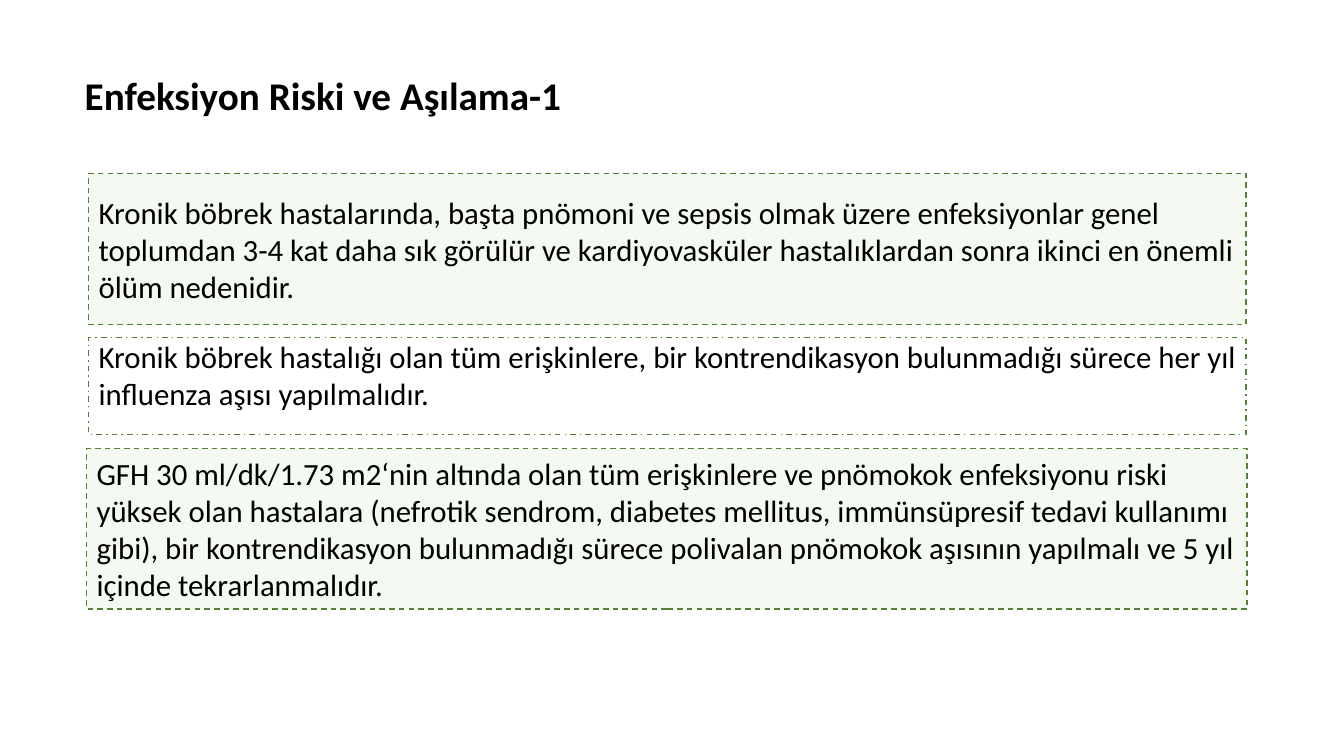
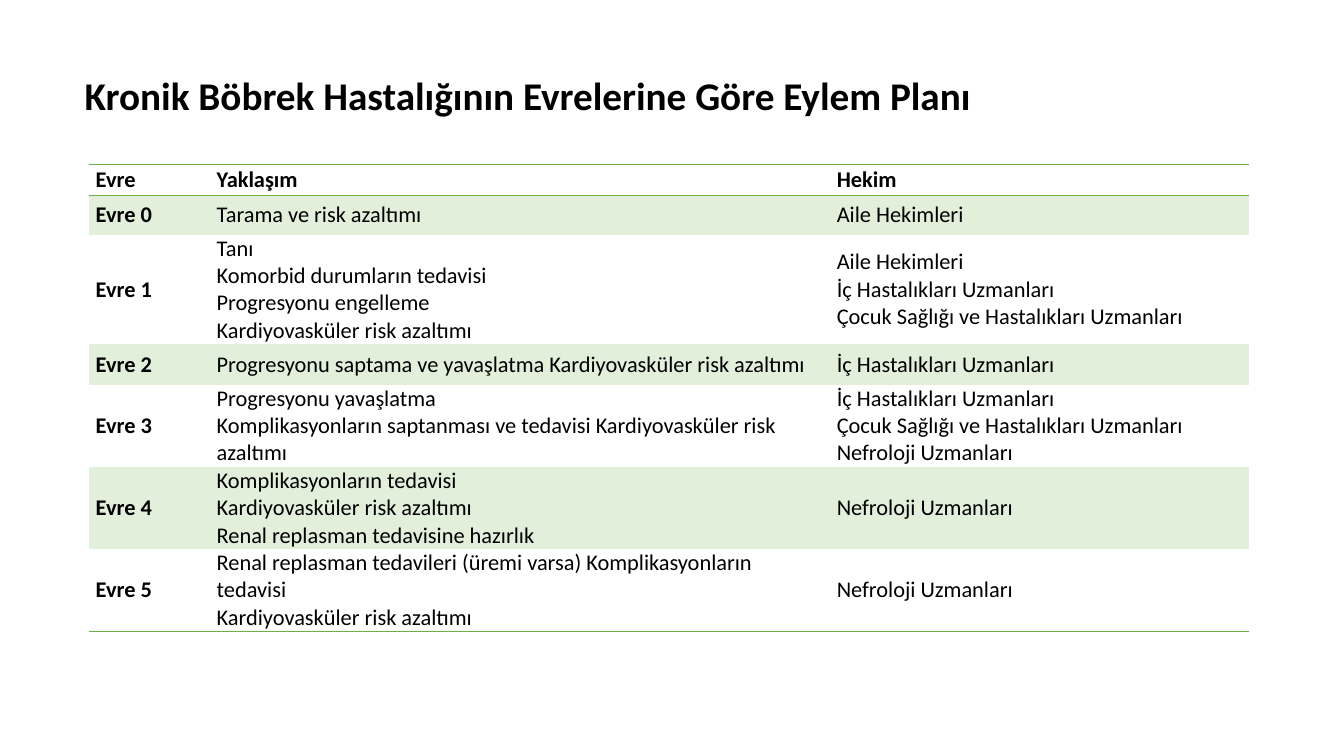
from lxml import etree
from pptx import Presentation
from pptx.dml.color import RGBColor
from pptx.enum import dml, shapes, text
from pptx.oxml import ns
from pptx.util import Inches, Pt

BLACK = RGBColor(0x00, 0x00, 0x00)
PALE_GREEN = RGBColor(0xF4, 0xF9, 0xF1)
DARK_GREEN = RGBColor(0x54, 0x82, 0x35)
RULE_GREEN = RGBColor(0x70, 0xAD, 0x47)
BAND_GREEN = RGBColor(0xE2, 0xEF, 0xDA)
PLAIN_TABLE = "{2D5ABB26-0587-4C30-8999-92F81FD0307C}"

DASH = dml.MSO_LINE.DASH
DASH_DOT = dml.MSO_LINE.DASH_DOT
TOP = text.MSO_ANCHOR.TOP
MIDDLE = text.MSO_ANCHOR.MIDDLE

STATEMENTS = [
    ((0.88, 1.72, 11.48, 1.5), PALE_GREEN, DASH, MIDDLE,
     "Kronik böbrek hastalarında, başta pnömoni ve sepsis olmak üzere enfeksiyonlar genel "
     "toplumdan 3-4 kat daha sık görülür ve kardiyovasküler hastalıklardan sonra ikinci en "
     "önemli ölüm nedenidir."),
    ((0.88, 3.35, 11.48, 0.96), None, DASH_DOT, TOP,
     "Kronik böbrek hastalığı olan tüm erişkinlere, bir kontrendikasyon bulunmadığı sürece "
     "her yıl influenza aşısı yapılmalıdır."),
    ((0.86, 4.45, 11.51, 1.59), PALE_GREEN, DASH, MIDDLE,
     "GFH 30 ml/dk/1.73 m2‘nin altında olan tüm erişkinlere ve pnömokok enfeksiyonu riski "
     "yüksek olan hastalara (nefrotik sendrom, diabetes mellitus, immünsüpresif tedavi "
     "kullanımı gibi), bir kontrendikasyon bulunmadığı sürece polivalan pnömokok aşısının "
     "yapılmalı ve 5 yıl içinde tekrarlanmalıdır."),
]

FAMILY = "Aile Hekimleri"
INTERNAL = "İç Hastalıkları Uzmanları"
PEDIATRIC = "Çocuk Sağlığı ve Hastalıkları Uzmanları"
NEPHROLOGY = "Nefroloji Uzmanları"
CARDIO_RISK = "Kardiyovasküler risk azaltımı"

COLUMN_WIDTHS = [1.2, 6.15, 4.16]
ROW_HEIGHTS = [0.31, 0.39, 1.07, 0.4, 0.8, 0.8, 0.8]
ACTION_PLAN = [
    (["Evre"], ["Yaklaşım"], ["Hekim"]),
    (["Evre 0"], ["Tarama ve risk azaltımı"], [FAMILY]),
    (["Evre 1"],
     ["Tanı", "Komorbid durumların tedavisi", "Progresyonu engelleme", CARDIO_RISK],
     [FAMILY, INTERNAL, PEDIATRIC]),
    (["Evre 2"], [f"Progresyonu saptama ve yavaşlatma {CARDIO_RISK}"], [INTERNAL]),
    (["Evre 3"],
     ["Progresyonu yavaşlatma",
      f"Komplikasyonların saptanması ve tedavisi {CARDIO_RISK}"],
     [INTERNAL, PEDIATRIC, NEPHROLOGY]),
    (["Evre 4"],
     ["Komplikasyonların tedavisi", CARDIO_RISK, "Renal replasman tedavisine hazırlık"],
     [NEPHROLOGY]),
    (["Evre 5"],
     ["Renal replasman tedavileri (üremi varsa) Komplikasyonların tedavisi", CARDIO_RISK],
     [NEPHROLOGY]),
]


class Deck:
    font_name = "Calibri"

    def __init__(self):
        self.presentation = Presentation()
        self.presentation.slide_width = Inches(13.33)
        self.presentation.slide_height = Inches(7.5)
        self.slide = None

    def apply(self, target, formats):
        for name, value in formats.items():
            setattr(target, name, value)

    def set_lines(self, frame, lines, size, bold=False):
        frame.text = "\n".join(lines)
        for paragraph in frame.paragraphs:
            paragraph.alignment = text.PP_ALIGN.LEFT
            self.apply(paragraph.font,
                       {"name": self.font_name, "size": Pt(size), "bold": bold})
            paragraph.font.color.rgb = BLACK

    def add_slide(self, heading):
        self.slide = self.presentation.slides.add_slide(self.presentation.slide_layouts[5])
        title = self.slide.shapes.title
        self.apply(title, {"left": Inches(0.74), "top": Inches(0.66),
                           "width": Inches(10), "height": Inches(0.57)})
        self.apply(title.text_frame, {"vertical_anchor": TOP, "word_wrap": True,
                                      "auto_size": text.MSO_AUTO_SIZE.NONE})
        self.set_lines(title.text_frame, [heading], 28, True)

    def add_statement(self, bounds, fill, dash, anchor, statement):
        panel = self.slide.shapes.add_shape(
            shapes.MSO_SHAPE.RECTANGLE, *map(Inches, bounds))
        panel.shadow.inherit = False
        if fill is None:
            panel.fill.background()
        else:
            panel.fill.solid()
            panel.fill.fore_color.rgb = fill
        panel.line.color.rgb = DARK_GREEN
        self.apply(panel.line, {"width": Pt(1), "dash_style": dash})
        self.apply(panel.text_frame, {"word_wrap": True, "vertical_anchor": anchor})
        if anchor == TOP:
            panel.text_frame.margin_top = 0
        self.set_lines(panel.text_frame, [statement], 22)

    def rule_cell(self, cell, edges):
        properties = cell._tc.get_or_add_tcPr()
        for edge in edges:
            border = etree.SubElement(properties, ns.qn(f"a:{edge}"), w=str(Pt(1)))
            fill = etree.SubElement(border, ns.qn("a:solidFill"))
            etree.SubElement(fill, ns.qn("a:srgbClr"), val=str(RULE_GREEN))

    def add_plan(self, left, top, widths, heights, rows):
        plan = self.slide.shapes.add_table(
            len(rows), len(widths), Inches(left), Inches(top),
            Inches(sum(widths)), Inches(sum(heights))).table
        self.apply(plan, {"first_row": False, "horz_banding": False})
        plan._tbl.tblPr.find(ns.qn("a:tableStyleId")).text = PLAIN_TABLE
        for column, width in zip(plan.columns, widths):
            column.width = Inches(width)
        for row, height in zip(plan.rows, heights):
            row.height = Inches(height)
        edges = {0: ["lnT", "lnB"], len(rows) - 1: ["lnB"]}
        for r, row in enumerate(rows):
            for c, lines in enumerate(row):
                cell = plan.cell(r, c)
                self.rule_cell(cell, edges.get(r, []))
                if r % 2:
                    cell.fill.solid()
                    cell.fill.fore_color.rgb = BAND_GREEN
                else:
                    cell.fill.background()
                self.apply(cell, {"vertical_anchor": MIDDLE,
                                  "margin_left": Inches(0.07), "margin_right": Inches(0.07),
                                  "margin_top": 0, "margin_bottom": 0})
                self.set_lines(cell.text_frame, lines, 16, r == 0 or c == 0)


def main():
    deck = Deck()
    deck.add_slide("Enfeksiyon Riski ve Aşılama-1")
    for statement in STATEMENTS:
        deck.add_statement(*statement)
    deck.add_slide("Kronik Böbrek Hastalığının Evrelerine Göre Eylem Planı")
    deck.add_plan(0.88, 1.63, COLUMN_WIDTHS, ROW_HEIGHTS, ACTION_PLAN)
    deck.presentation.save("out.pptx")


if __name__ == "__main__":
    main()
